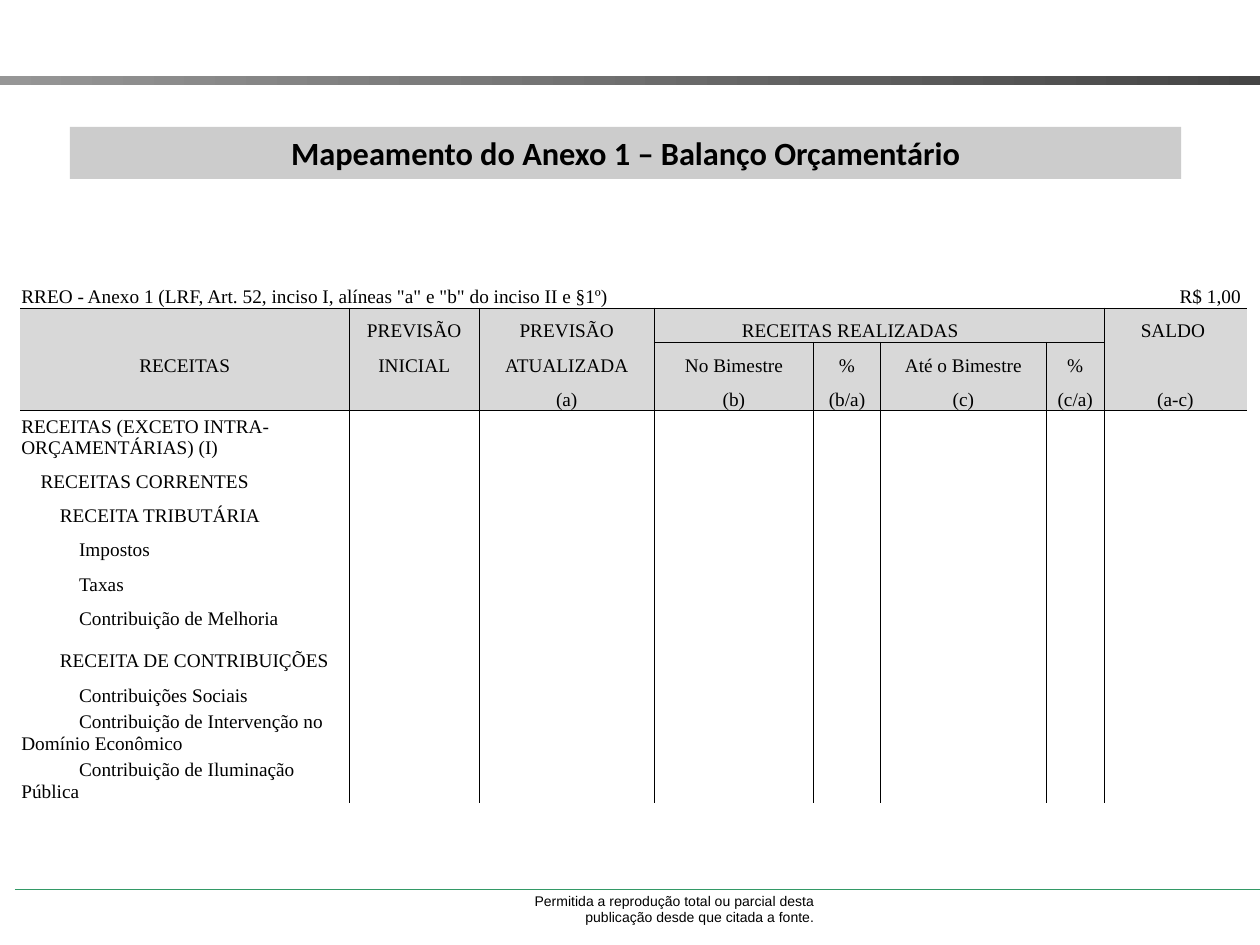
from dataclasses import dataclass

from lxml.etree import SubElement
from pptx import Presentation
from pptx.dml.color import RGBColor
from pptx.enum.shapes import MSO_CONNECTOR, MSO_SHAPE
from pptx.enum.text import MSO_ANCHOR, PP_ALIGN
from pptx.oxml.ns import qn
from pptx.util import Cm, Pt


@dataclass(frozen=True)
class Theme:
    ink: RGBColor = RGBColor(0, 0, 0)
    green: RGBColor = RGBColor(0x33, 0x99, 0x66)
    band: RGBColor = RGBColor(0xCC, 0xCC, 0xCC)
    head: RGBColor = RGBColor(0xD8, 0xD8, 0xD8)
    light: RGBColor = RGBColor(0x96, 0x96, 0x96)
    dark: RGBColor = RGBColor(0x45, 0x45, 0x45)
    title: float = 18.5
    body: float = 11
    note: float = 8


theme = Theme()


def write(par, text, face, size, align, bold=False):
    par.text = text
    par.alignment = align
    par.font.name = face
    par.font.size = Pt(size)
    par.font.bold = bold
    par.font.color.rgb = theme.ink


def edge(cell, side, shown):
    """Draw or hide one border of a cell; side is L, R, T or B."""
    line = SubElement(cell._tc.get_or_add_tcPr(), qn(f"a:ln{side}"), w=str(Pt(0.5)))
    if shown:
        fill = SubElement(line, qn("a:solidFill"))
        SubElement(fill, qn("a:srgbClr"), val=str(theme.ink))
    else:
        SubElement(line, qn("a:noFill"))


deck = Presentation()
deck.slide_width, deck.slide_height = Cm(25.4), Cm(19.05)
slide = deck.slides.add_slide(deck.slide_layouts[6])
shapes = slide.shapes

# Footer
rule = shapes.add_connector(
    MSO_CONNECTOR.STRAIGHT, Cm(0.3), Cm(17.93), Cm(25.4), Cm(17.93))
rule.line.color.rgb = theme.green
rule.line.width = Pt(0.75)
SubElement(rule._element.spPr, qn("a:effectLst"))

note = shapes.add_textbox(Cm(10.52), Cm(17.86), Cm(6.15), Cm(0.94))
note.text_frame.word_wrap = True
write(note.text_frame.paragraphs[0],
      "Permitida a reprodução total ou parcial desta publicação desde que citada a fonte.",
      "Arial", theme.note, PP_ALIGN.RIGHT)

# Top bar and title
bar = shapes.add_shape(MSO_SHAPE.RECTANGLE, 0, Cm(1.53), Cm(25.4), Cm(0.19))
bar.shadow.inherit = False
bar.line.fill.background()
bar.fill.gradient()
bar.fill.gradient_angle = 0
for stop, color in zip(bar.fill.gradient_stops, (theme.light, theme.dark)):
    stop.color.rgb = color

title = shapes.add_shape(MSO_SHAPE.RECTANGLE, Cm(1.41), Cm(2.56), Cm(22.4), Cm(1.05))
title.shadow.inherit = False
title.line.fill.background()
title.fill.solid()
title.fill.fore_color.rgb = theme.band
title.text_frame.word_wrap = True
write(title.text_frame.paragraphs[0], "Mapeamento do Anexo 1 – Balanço Orçamentário",
      "Calibri", theme.title, PP_ALIGN.CENTER, True)

# Budget table
widths = [6.63, 2.62, 3.53, 3.07, 0.1, 1.35, 1.75, 1.45, 0.13, 1.17, 2.87]
heights = [0.69, 1.35] + [0.69] * 3 + [0.97] + [0.69] * 5 + [0.86, 0.69, 0.97, 0.97]
heading = {
    (1, 0): 'RREO - Anexo 1 (LRF, Art. 52, inciso I, alíneas "a" e "b" do inciso II e §1º)',
    (1, 10): "R$ 1,00 ",
    (2, 1): "PREVISÃO", (2, 2): "PREVISÃO", (2, 3): "RECEITAS REALIZADAS",
    (2, 10): "SALDO ",
    (3, 0): "RECEITAS", (3, 1): "INICIAL", (3, 2): "ATUALIZADA",
    (3, 3): "No Bimestre", (3, 5): "%", (3, 6): "Até o Bimestre", (3, 9): "%",
    (4, 2): "(a)", (4, 3): "(b)", (4, 5): "(b/a)", (4, 6): "(c)",
    (4, 9): "(c/a)", (4, 10): "(a-c)",
}
# Revenue lines: depth in the outline, label
lines = [
    (0, "RECEITAS (EXCETO INTRA-ORÇAMENTÁRIAS) (I)"),
    (1, "RECEITAS CORRENTES"),
    (2, "RECEITA TRIBUTÁRIA"),
    (3, "Impostos"),
    (3, "Taxas"),
    (3, "Contribuição de Melhoria"),
    (2, "RECEITA DE CONTRIBUIÇÕES"),
    (3, "Contribuições Sociais"),
    (3, "Contribuição de Intervenção no Domínio Econômico"),
    (3, "Contribuição de Iluminação Pública"),
]
first = 5
spans = {0: {4: 2}, 1: {0: 4, 4: 2}, 2: {3: 6}, 3: {3: 2, 6: 3}, 4: {3: 2, 6: 3}}

frame = shapes.add_table(len(heights), len(widths), Cm(0.41), Cm(4.17),
                         Cm(sum(widths)), Cm(sum(heights)))
table = frame.table
table.first_row = table.horz_banding = False
for col, width in zip(table.columns, widths):
    col.width = Cm(width)
for row, height in zip(table.rows, heights):
    row.height = Cm(height)

for r in range(len(heights)):
    span = spans.get(r, {6: 2})
    for c, count in span.items():
        table.cell(r, c).merge(table.cell(r, c + count - 1))
    if r < 2:
        walls = set()
    elif r == 2:
        walls = {1, 2, 3, 10}
    else:
        walls = {1, 2, 3, 5, 6, 9, 10}

    for c in range(len(widths)):
        cell = table.cell(r, c)
        cell.margin_left = cell.margin_right = cell.margin_top = Cm(0.02)
        cell.margin_bottom = 0
        cell.vertical_anchor = MSO_ANCHOR.BOTTOM
        split = 3 <= c < 10
        edge(cell, "L", c in walls)
        edge(cell, "R", c + span.get(c, 1) in walls)
        edge(cell, "T", r in (2, 5) or r == 3 and split)
        edge(cell, "B", r in (1, 4) or r == 2 and split)
        if 2 <= r < first:
            cell.fill.solid()
            cell.fill.fore_color.rgb = theme.head
        else:
            cell.fill.background()

        par = cell.text_frame.paragraphs[0]
        text, align = heading.get((r, c), ""), PP_ALIGN.CENTER
        if r == 1:
            align = PP_ALIGN.RIGHT if c else PP_ALIGN.LEFT
        elif r >= first and c == 0:
            depth, text = lines[r - first]
            align = PP_ALIGN.LEFT
            props = par._p.get_or_add_pPr()
            props.set("marL", "0")
            props.set("indent", str(Pt(theme.body * depth)))
        if text:
            write(par, text, "Times New Roman", theme.body, align)
        else:
            SubElement(par._p, qn("a:endParaRPr"), sz=str(theme.body * 100))

deck.save("out.pptx")
